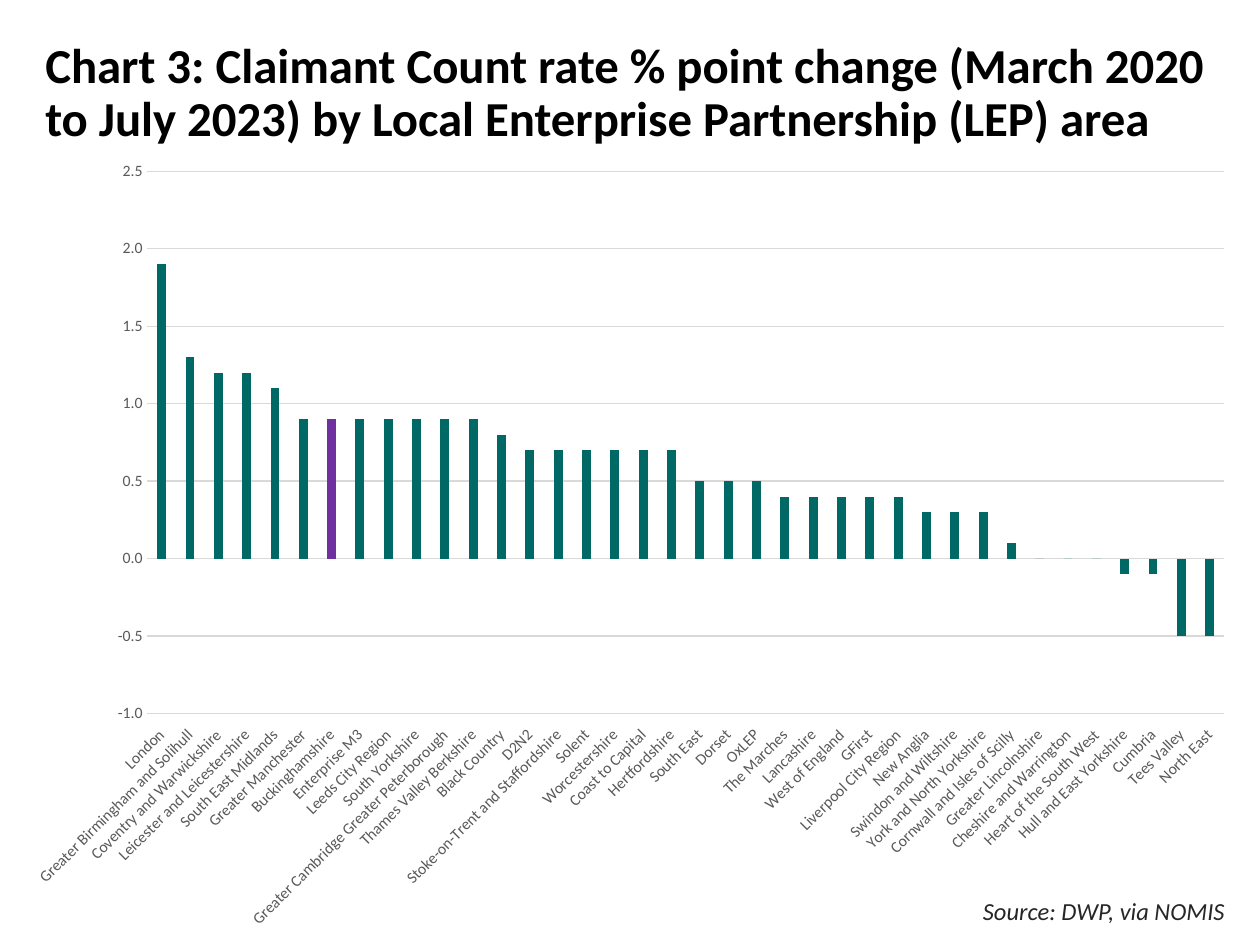
from dataclasses import dataclass

import lxml.etree
import pptx
import pptx.chart.data
import pptx.dml.color
import pptx.enum.chart
import pptx.enum.text
import pptx.oxml
import pptx.oxml.ns
import pptx.util
from pptx.util import Inches


@dataclass(frozen=True)
class Theme:
    font: str = "Calibri"
    title: str = "000000"
    source: str = "262626"
    axis_text: str = "595959"
    grid: str = "D9D9D9"
    bar: str = "006965"
    highlight: str = "7030A0"
    title_size: float = 27.9
    source_size: float = 14
    chart_size: float = 10
    axis_size: float = 9
    line_width: float = 0.75


@dataclass(frozen=True)
class RateChange:
    area: str
    points: float


THEME = Theme()
HIGHLIGHTED_AREA = "Buckinghamshire"

# Areas grouped by their percentage point change
AREAS_BY_CHANGE: list[tuple[float, list[str]]] = [
    (1.9, ["London"]),
    (1.3, ["Greater Birmingham and Solihull"]),
    (1.2, ["Coventry and Warwickshire", "Leicester and Leicestershire"]),
    (1.1, ["South East Midlands"]),
    (0.9, ["Greater Manchester", "Buckinghamshire", "Enterprise M3",
           "Leeds City Region", "South Yorkshire",
           "Greater Cambridge Greater Peterborough", "Thames Valley Berkshire"]),
    (0.8, ["Black Country"]),
    (0.7, ["D2N2", "Stoke-on-Trent and Staffordshire", "Solent",
           "Worcestershire", "Coast to Capital", "Hertfordshire"]),
    (0.5, ["South East", "Dorset", "OxLEP"]),
    (0.4, ["The Marches", "Lancashire", "West of England", "GFirst",
           "Liverpool City Region"]),
    (0.3, ["New Anglia", "Swindon and Wiltshire", "York and North Yorkshire"]),
    (0.1, ["Cornwall and Isles of Scilly"]),
    (0, ["Greater Lincolnshire", "Cheshire and Warrington",
         "Heart of the South West"]),
    (-0.1, ["Hull and East Yorkshire", "Cumbria"]),
    (-0.5, ["Tees Valley", "North East"]),
]
RATE_CHANGES = [RateChange(area, points)
                for points, areas in AREAS_BY_CHANGE for area in areas]


def rgb(color: str) -> pptx.dml.color.RGBColor:
    return pptx.dml.color.RGBColor.from_string(color)


def format_font(font, size: float, color: str, bold: bool = False,
                italic: bool = False) -> None:
    font.name = THEME.font
    font.size = pptx.util.Pt(size)
    font.bold = bold
    font.italic = italic
    font.color.rgb = rgb(color)


def write_text(shape, text: str, *, size: float, color: str, bold: bool = False,
               italic: bool = False, align=pptx.enum.text.PP_ALIGN.LEFT,
               anchor=pptx.enum.text.MSO_ANCHOR.TOP,
               line_spacing: float = 1.0) -> None:
    frame = shape.text_frame
    frame.word_wrap = True
    frame.auto_size = pptx.enum.text.MSO_AUTO_SIZE.NONE
    frame.vertical_anchor = anchor
    paragraph = frame.paragraphs[0]
    paragraph.alignment = align
    paragraph.line_spacing = line_spacing
    run = paragraph.add_run()
    run.text = text
    format_font(run.font, size, color, bold, italic)


def set_plot_layout(chart, x: float, y: float, w: float, h: float) -> None:
    """Fix the inner plot area as fractions of the chart frame."""
    plot_area = chart._chartSpace.chart.plotArea
    for old_layout in plot_area.findall(pptx.oxml.ns.qn("c:layout")):
        plot_area.remove(old_layout)
    layout = lxml.etree.Element(pptx.oxml.ns.qn("c:layout"))
    manual = lxml.etree.SubElement(layout, pptx.oxml.ns.qn("c:manualLayout"))
    settings = {"layoutTarget": "inner", "xMode": "edge", "yMode": "edge",
                "x": x, "y": y, "w": w, "h": h}
    for name, value in settings.items():
        element = lxml.etree.SubElement(manual, pptx.oxml.ns.qn(f"c:{name}"))
        element.set("val", str(value))
    plot_area.insert(0, layout)


def format_line(line) -> None:
    line.color.rgb = rgb(THEME.grid)
    line.width = pptx.util.Pt(THEME.line_width)


def format_axes(chart) -> None:
    category_axis, value_axis = chart.category_axis, chart.value_axis
    for axis in (category_axis, value_axis):
        axis.major_tick_mark = pptx.enum.chart.XL_TICK_MARK.NONE
        axis.minor_tick_mark = pptx.enum.chart.XL_TICK_MARK.NONE
        format_font(axis.tick_labels.font, THEME.axis_size, THEME.axis_text)

    # Category names slant upwards below the plot
    category_axis.tick_label_position = pptx.enum.chart.XL_TICK_LABEL_POSITION.LOW
    category_axis.has_major_gridlines = False
    format_line(category_axis.format.line)
    label_body = category_axis._element.find(
        f"{pptx.oxml.ns.qn('c:txPr')}/{pptx.oxml.ns.qn('a:bodyPr')}")
    label_body.set("rot", "-2700000")
    label_body.set("vert", "horz")

    value_axis.minimum_scale = -1
    value_axis.maximum_scale = 2.5
    value_axis.major_unit = 0.5
    value_axis.tick_labels.number_format = "#,##0.0"
    value_axis.tick_labels.number_format_is_linked = False
    value_axis.format.line.fill.background()
    value_axis.has_major_gridlines = True
    format_line(value_axis.major_gridlines.format.line)


def add_rate_chart(slide, changes: list[RateChange]) -> None:
    chart_data = pptx.chart.data.CategoryChartData()
    chart_data.categories = [change.area for change in changes]
    chart_data.add_series("Series 1", [change.points for change in changes])
    chart = slide.shapes.add_chart(
        pptx.enum.chart.XL_CHART_TYPE.COLUMN_CLUSTERED,
        Inches(0.09), Inches(1.17), Inches(9.82), Inches(6.33), chart_data).chart
    chart.has_legend = False
    chart.has_title = False
    format_font(chart.font, THEME.chart_size, THEME.title)
    set_plot_layout(chart, x=0.11, y=0.03, w=0.87, h=0.68)
    format_axes(chart)

    # Columns, with one area picked out
    plot = chart.plots[0]
    plot.gap_width = 219
    plot.overlap = -27
    plot.vary_by_categories = False
    series = plot.series[0]
    series.invert_if_negative = False
    series.format.fill.solid()
    series.format.fill.fore_color.rgb = rgb(THEME.bar)
    areas = [change.area for change in changes]
    highlight = series.points[areas.index(HIGHLIGHTED_AREA)].format.fill
    highlight.solid()
    highlight.fore_color.rgb = rgb(THEME.highlight)


def main() -> None:
    presentation = pptx.Presentation()
    presentation.slide_width = Inches(10)
    presentation.slide_height = Inches(7.5)
    slide = presentation.slides.add_slide(presentation.slide_layouts[5])

    # Title, raised within its box by a deep bottom margin
    title = slide.shapes.title
    title.left, title.top = Inches(0.26), Inches(0.45)
    title.width, title.height = Inches(9.48), Inches(1.02)
    title.text_frame.margin_bottom = Inches(0.48)
    write_text(title, "Chart 3: Claimant Count rate % point change (March 2020 "
               "to July 2023) by Local Enterprise Partnership (LEP) area",
               size=THEME.title_size, color=THEME.title, bold=True,
               anchor=pptx.enum.text.MSO_ANCHOR.MIDDLE, line_spacing=0.9)

    # Source line
    source = slide.shapes.add_textbox(
        Inches(7.44), Inches(7.06), Inches(2.38), Inches(0.34))
    write_text(source, "Source: DWP, via NOMIS", size=THEME.source_size,
               color=THEME.source, italic=True,
               align=pptx.enum.text.PP_ALIGN.RIGHT)

    add_rate_chart(slide, RATE_CHANGES)
    presentation.save("out.pptx")


if __name__ == "__main__":
    main()
